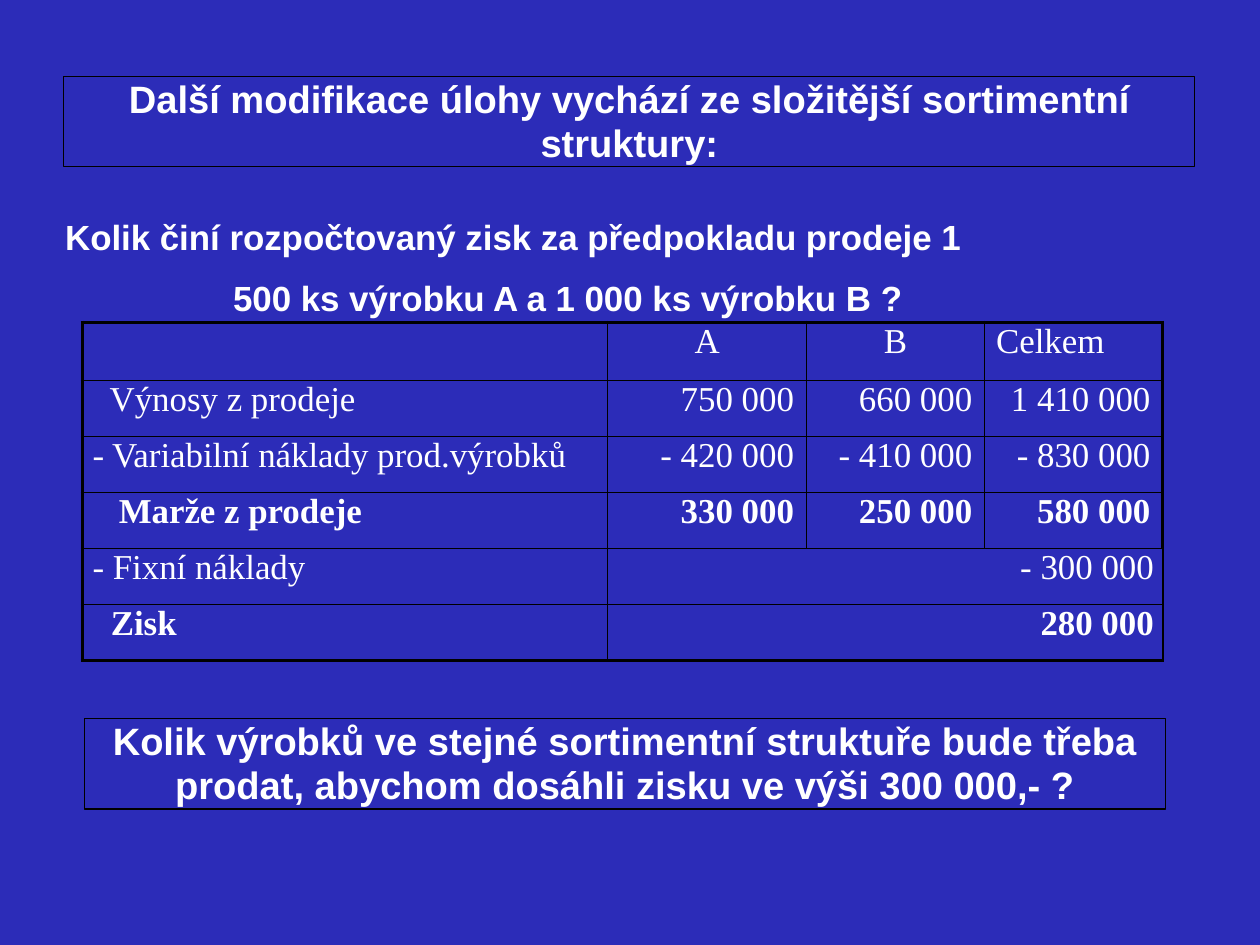
from lxml import etree
from pptx import Presentation
from pptx.dml.color import RGBColor
from pptx.enum.shapes import MSO_SHAPE
from pptx.enum.text import MSO_ANCHOR, PP_ALIGN
from pptx.oxml.ns import qn
from pptx.util import Inches, Pt

BLUE = RGBColor(0x2C, 0x2C, 0xB8)
BLACK = RGBColor(0, 0, 0)
WHITE = RGBColor(0xFF, 0xFF, 0xFF)
RECTANGLE = MSO_SHAPE.RECTANGLE
TOP = MSO_ANCHOR.TOP
LEFT, CENTER, RIGHT = PP_ALIGN.LEFT, PP_ALIGN.CENTER, PP_ALIGN.RIGHT

HEADING = ["Další modifikace úlohy vychází ze složitější sortimentní", "struktury:"]
QUESTION = ("Kolik činí rozpočtovaný zisk za předpokladu prodeje 1 500 ks "
            "výrobku A a 1 000 ks výrobku B ?")
TASK = ["Kolik výrobků ve stejné sortimentní struktuře bude třeba",
        "prodat, abychom dosáhli zisku ve výši 300 000,- ?"]

COLUMN_WIDTHS = [4.6, 1.74, 1.56, 1.56]
ROW_HEIGHTS = [0.51] + [0.49] * 5
PRODUCTS = ["A", "B", "Celkem"]
# Label, label indent, bold, amounts; a single amount spans all products
BUDGET = [
    ("Výnosy z prodeje", 0.24, False, ["750 000", "660 000", "1 410 000"]),
    ("- Variabilní náklady prod.výrobků", 0.09, False,
     ["- 420 000", "- 410 000", "- 830 000"]),
    ("Marže z prodeje", 0.32, True, ["330 000", "250 000", "580 000"]),
    ("- Fixní náklady", 0.09, False, ["- 300 000"]),
    ("Zisk", 0.25, True, ["280 000"]),
]


class SlideBuilder:
    heading_font = "Arial"
    table_font = "Times New Roman"

    def __init__(self, slide):
        self.slide = slide
        slide.background.fill.solid()
        slide.background.fill.fore_color.rgb = BLUE

    def add_run(self, paragraph, text, size, font, bold):
        run = paragraph.add_run()
        run.text = text
        run.font.size = Pt(size)
        run.font.name = font
        run.font.bold = bold
        run.font.color.rgb = WHITE

    def clear_margins(self, frame):
        frame.margin_left = frame.margin_right = 0
        frame.margin_top = frame.margin_bottom = 0
        frame.vertical_anchor = TOP

    def framed_text(self, left, top, width, height, lines):
        shape = self.slide.shapes.add_shape(
            RECTANGLE, Inches(left), Inches(top), Inches(width), Inches(height))
        shape.shadow.inherit = False
        shape.fill.solid()
        shape.fill.fore_color.rgb = BLUE
        shape.line.color.rgb = BLACK
        shape.line.width = Pt(0.75)
        frame = shape.text_frame
        frame.word_wrap = True
        self.clear_margins(frame)
        for index, line in enumerate(lines):
            paragraph = frame.add_paragraph() if index else frame.paragraphs[0]
            paragraph.alignment = CENTER
            paragraph.line_spacing = Pt(27.8)
            self.add_run(paragraph, line, 24, self.heading_font, True)

    def hanging_text(self, left, top, width, height, text):
        box = self.slide.shapes.add_textbox(
            Inches(left), Inches(top), Inches(width), Inches(height))
        frame = box.text_frame
        frame.word_wrap = True
        self.clear_margins(frame)
        paragraph = frame.paragraphs[0]
        paragraph.line_spacing = 1.46
        properties = paragraph._p.get_or_add_pPr()
        properties.set("marL", str(Inches(1.49)))
        properties.set("indent", str(Inches(-1.47)))
        self.add_run(paragraph, text, 22, self.heading_font, True)

    def table(self, left, top, widths, heights):
        frame = self.slide.shapes.add_table(
            len(heights), len(widths), Inches(left), Inches(top),
            Inches(sum(widths)), Inches(sum(heights)))
        table = frame.table
        table.first_row = table.horz_banding = False
        for column, width in zip(table.columns, widths):
            column.width = Inches(width)
        for row, height in zip(table.rows, heights):
            row.height = Inches(height)
        last_row, last_column = len(heights) - 1, len(widths) - 1
        for r in range(len(heights)):
            for c in range(len(widths)):
                cell = table.cell(r, c)
                self.clear_margins(cell)
                self.borders(cell, {"lnL": c == 0, "lnR": c == last_column,
                                    "lnT": r == 0, "lnB": r == last_row})
                cell.fill.solid()
                cell.fill.fore_color.rgb = BLUE
        return table

    def borders(self, cell, outer_sides):
        properties = cell._tc.get_or_add_tcPr()
        for side, is_outer in outer_sides.items():
            line = etree.SubElement(properties, qn(f"a:{side}"),
                                    w=str(Pt(2.25 if is_outer else 1)))
            fill = etree.SubElement(line, qn("a:solidFill"))
            etree.SubElement(fill, qn("a:srgbClr"), val=str(BLACK))

    def cell_text(self, cell, text, alignment, margin=0.0, bold=False):
        if alignment == RIGHT:
            cell.margin_right = Inches(margin)
        else:
            cell.margin_left = Inches(margin)
        paragraph = cell.text_frame.paragraphs[0]
        paragraph.alignment = alignment
        self.add_run(paragraph, text, 22, self.table_font, bold)


def main():
    presentation = Presentation()
    presentation.slide_width = Inches(11.03)
    presentation.slide_height = Inches(8.27)
    builder = SlideBuilder(
        presentation.slides.add_slide(presentation.slide_layouts[6]))

    # Heading and questions
    builder.framed_text(0.56, 0.67, 9.9, 0.79, HEADING)
    builder.hanging_text(0.55, 1.72, 7.88, 1.08, QUESTION)
    builder.framed_text(0.74, 6.29, 9.46, 0.79, TASK)

    # Budget table
    table = builder.table(0.72, 2.82, COLUMN_WIDTHS, ROW_HEIGHTS)
    for column, product in enumerate(PRODUCTS, start=1):
        is_total = product == "Celkem"
        builder.cell_text(table.cell(0, column), product,
                          LEFT if is_total else CENTER, 0.1 if is_total else 0)
    for row, (label, indent, bold, amounts) in enumerate(BUDGET, start=1):
        builder.cell_text(table.cell(row, 0), label, LEFT, indent, bold)
        is_spanned = len(amounts) == 1
        if is_spanned:
            table.cell(row, 1).merge(table.cell(row, len(PRODUCTS)))
        for column, amount in enumerate(amounts, start=1):
            builder.cell_text(table.cell(row, column), amount, RIGHT,
                              0.08 if is_spanned else 0.11, bold)

    presentation.save("out.pptx")


if __name__ == "__main__":
    main()
